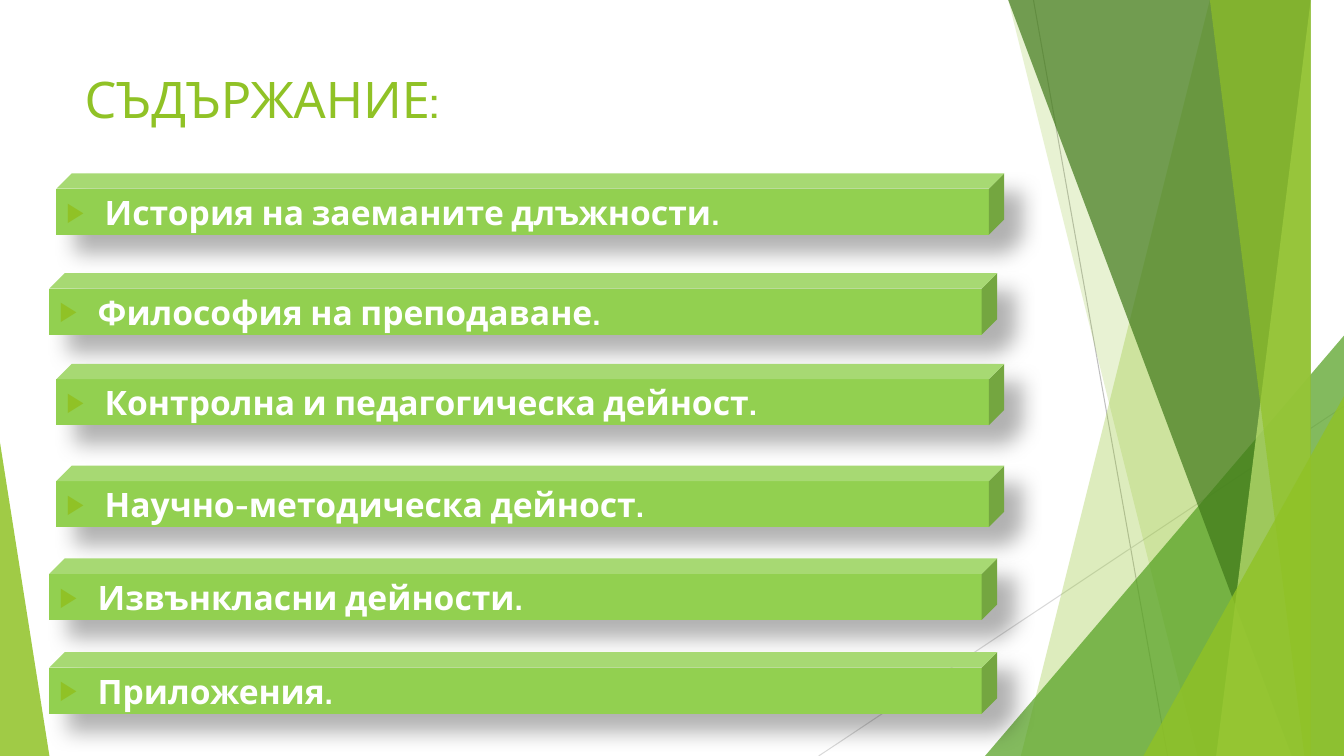
"""Build a table-of-contents slide with green cube bars."""
from lxml.etree import SubElement as Sub
from pptx import Presentation
from pptx.dml.color import RGBColor as Rgb
from pptx.enum.shapes import MSO_CONNECTOR as Link, MSO_SHAPE as Kind
from pptx.enum.text import MSO_ANCHOR as Anchor, PP_ALIGN as Align
from pptx.oxml.ns import qn
from pptx.util import Inches, Pt

WIDE, HIGH = 13.33, 7.5
HUES = {
    "lime": "90C226", "bar": "92D050", "leaf": "54A021", "dark": "3F7819",
    "pale": "C0E474", "white": "FFFFFF", "black": "000000",
    "gray": "BFBFBF", "mist": "D9D9D9",
}


class Deck:
    def __init__(self, slide):
        self.slide = slide
        self.items = slide.shapes
        self.font = "Cabin"

    def hue(self, name):
        return Rgb.from_string(HUES[name])

    def node(self, top, tag, **attrs):
        return Sub(top, qn(tag), {key: str(val) for key, val in attrs.items()})

    def paint(self, shape, name, alpha=100):
        shape.shadow.inherit = False
        shape.line.fill.background()
        shape.fill.solid()
        shape.fill.fore_color.rgb = self.hue(name)
        if alpha < 100:
            tint = shape._element.spPr.find(qn("a:solidFill"))[0]
            self.node(tint, "a:alpha", val=alpha * 1000)

    def line(self, start, end, name):
        ends = [Inches(n) for n in (*start, *end)]
        link = self.items.add_connector(Link.STRAIGHT, *ends)
        link.line.color.rgb = self.hue(name)
        link.line.width = Pt(0.75)
        self.node(link._element.spPr, "a:effectLst")

    def shard(self, top, low, name, alpha):
        form = self.items.build_freeform(top, 0, scale=Inches(1))
        form.add_line_segments([(WIDE, 0), (WIDE, HIGH), (low, HIGH)], close=True)
        self.paint(form.convert_to_shape(), name, alpha)

    def peak(self, left, top, width, tip, name, alpha):
        box = [Inches(n) for n in (left, top, width, HIGH - top)]
        shape = self.items.add_shape(Kind.ISOSCELES_TRIANGLE, *box)
        shape.adjustments[0] = tip
        self.paint(shape, name, alpha)

    def label(self, frame, text, size, name, bold=False):
        frame.word_wrap = True
        para = frame.paragraphs[0]
        para.text = text
        para.alignment = Align.LEFT
        font = para.font
        font.name, font.size, font.bold = self.font, Pt(size), bold
        font.color.rgb = self.hue(name)
        return para

    def title(self, text):
        box = [Inches(n) for n in (0.74, 0.67, 9.4, 0.81)]
        frame = self.items.add_textbox(*box).text_frame
        frame.margin_top = Inches(0.01)
        self.label(frame, text, 36, "lime")

    def bullet(self, para):
        props = para._p.get_or_add_pPr()
        props.set("marL", str(Inches(0.38)))
        props.set("indent", str(-Inches(0.38)))
        font = props.find(qn("a:defRPr"))
        tint = self.node(props, "a:buClr")
        self.node(tint, "a:srgbClr", val=HUES["lime"])
        self.node(props, "a:buSzPct", val=80000)
        self.node(props, "a:buFont", typeface="Arial")
        self.node(props, "a:buChar", char="▶")
        props.append(font)

    def shade(self, shape):
        effects = shape._element.spPr.find(qn("a:effectLst"))
        cast = self.node(effects, "a:outerShdw", blurRad=Pt(15), dist=Pt(18),
                         dir=45 * 60000, algn="tl", rotWithShape=0)
        tint = self.node(cast, "a:srgbClr", val=HUES["black"])
        self.node(tint, "a:alpha", val=30000)

    def bar(self, left, top, text):
        box = [Inches(n) for n in (left, top, 9.4, 0.61)]
        shape = self.items.add_shape(Kind.CUBE, *box)
        self.paint(shape, "bar")
        self.shade(shape)
        frame = shape.text_frame
        frame.vertical_anchor = Anchor.MIDDLE
        self.bullet(self.label(frame, text, 24, "white", True))


def main():
    show = Presentation()
    show.slide_width, show.slide_height = Inches(WIDE), Inches(HIGH)
    deck = Deck(show.slides.add_slide(show.slide_layouts[6]))

    deck.line((10.25, 0), (11.58, HIGH), "gray")
    deck.line((WIDE, 4.03), (8.12, HIGH), "mist")
    deck.shard(12.28, 10.04, "lime", 30)
    deck.shard(10.5, 11.83, "lime", 20)
    deck.peak(9.77, 3.33, 3.56, 1, "leaf", 72)
    deck.shard(10.21, 12.91, "dark", 70)
    deck.shard(13.03, 11.92, "pale", 70)
    deck.shard(11.96, 13.18, "lime", 65)
    deck.peak(11.34, 3.93, 1.99, 1, "lime", 80)
    deck.peak(0, 4.39, 0.49, 0, "lime", 85)

    deck.title("СЪДЪРЖАНИЕ:")
    for left, top, text in (
        (0.56, 1.72, "История на заеманите длъжности."),
        (0.49, 2.71, "Философия на преподаване."),
        (0.56, 3.61, "Контролна и педагогическа дейност."),
        (0.56, 4.62, "Научно-методическа дейност."),
        (0.49, 5.54, "Извънкласни дейности."),
        (0.49, 6.47, "Приложения."),
    ):
        deck.bar(left, top, text)
    show.save("out.pptx")


if __name__ == "__main__":
    main()
